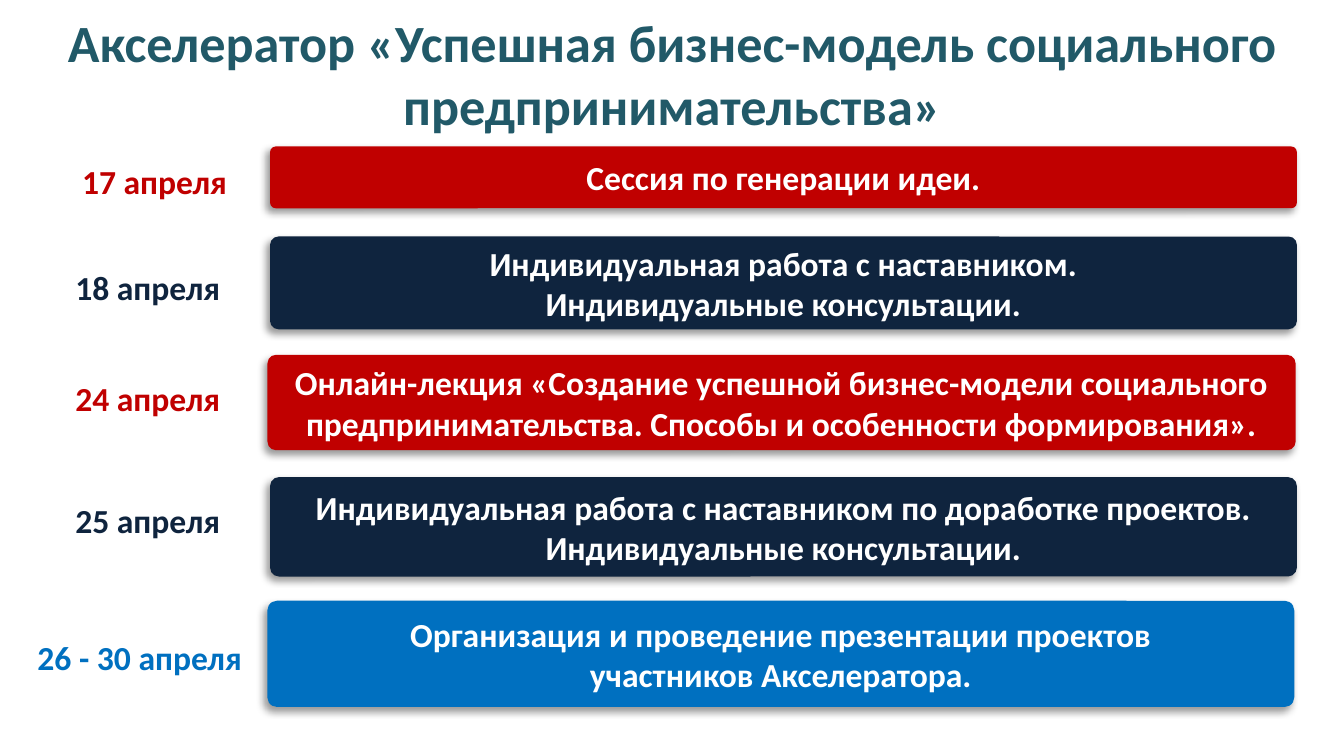
"""Build a one-slide timetable of the social business accelerator."""
from dataclasses import dataclass
from lxml import etree
from pptx import Presentation
from pptx.dml.color import RGBColor as RGB
from pptx.enum.shapes import MSO_SHAPE as Shape
from pptx.enum.text import MSO_ANCHOR as Anchor, PP_ALIGN as Align
from pptx.oxml.ns import qn
from pptx.util import Inches, Pt


@dataclass(frozen=True)
class Theme:
    font: str = "Calibri"
    teal: str = "215968"
    red: str = "C00000"
    navy: str = "0F243E"
    blue: str = "0070C0"
    white: str = "FFFFFF"
    black: str = "000000"
    title: int = 28
    body: int = 18


def write(shape, text, size, color, anchor=Anchor.MIDDLE):
    frame = shape.text_frame
    frame.word_wrap = True
    frame.vertical_anchor = anchor
    for i, line in enumerate(text.split("\n")):
        para = frame.paragraphs[0] if i == 0 else frame.add_paragraph()
        para.alignment = Align.CENTER
        run = para.add_run()
        run.text = line
        font = run.font
        font.name, font.size, font.bold = theme.font, Pt(size), True
        font.color.rgb = RGB.from_string(color)


def shade(shape):
    shape.shadow.inherit = False
    effects = shape._element.spPr.find(qn("a:effectLst"))
    outer = etree.SubElement(effects, qn("a:outerShdw"), blurRad=str(Pt(4)),
                             dist=str(Pt(3)), dir=str(135 * 60000),
                             algn="tr", rotWithShape="0")
    tint = etree.SubElement(outer, qn("a:srgbClr"), val=theme.black)
    etree.SubElement(tint, qn("a:alpha"), val="40000")


theme = Theme()
deck = Presentation()
deck.slide_width = Inches(10)
deck.slide_height = Inches(10 * 9 / 16)
slide = deck.slides.add_slide(deck.slide_layouts[6])
shapes = slide.shapes

title = shapes.add_textbox(0, 0, Inches(10), Inches(1.09))
write(title, "Акселератор «Успешная бизнес-модель социального предпринимательства»",
      size=theme.title, color=theme.teal)

stages = [
    ("17 апреля", (0.33, 1.15, 1.64), (2.01, 1.09, 7.64, 0.46), theme.red,
     "Сессия по генерации идеи."),
    ("18 апреля", (0.28, 1.94, 1.64), (2.01, 1.76, 7.64, 0.69), theme.navy,
     "Индивидуальная работа с наставником.\nИндивидуальные консультации."),
    ("24 апреля", (0.28, 2.76, 1.64), (1.99, 2.64, 7.65, 0.71), theme.red,
     "Онлайн-лекция «Создание успешной бизнес-модели социального "
     "предпринимательства. Способы и особенности формирования»."),
    ("25 апреля", (0.28, 3.67, 1.64), (2.01, 3.55, 7.64, 0.74), theme.navy,
     "Индивидуальная работа с наставником по доработке проектов. "
     "Индивидуальные консультации."),
    ("26 - 30 апреля", (0.14, 4.69, 1.8), (1.99, 4.47, 7.64, 0.79), theme.blue,
     "Организация и проведение презентации проектов\nучастников Акселератора."),
]

for date, spot, box, color, text in stages:
    bar = shapes.add_shape(Shape.ROUNDED_RECTANGLE, *map(Inches, box))
    bar.adjustments[0] = 0.09
    bar.fill.solid()
    bar.fill.fore_color.rgb = RGB.from_string(color)
    bar.line.fill.background()
    shade(bar)
    write(bar, text, size=theme.body, color=theme.white)
    label = shapes.add_textbox(*map(Inches, spot), Inches(0.4))
    write(label, date, size=theme.body, color=color, anchor=Anchor.TOP)

deck.save("out.pptx")
